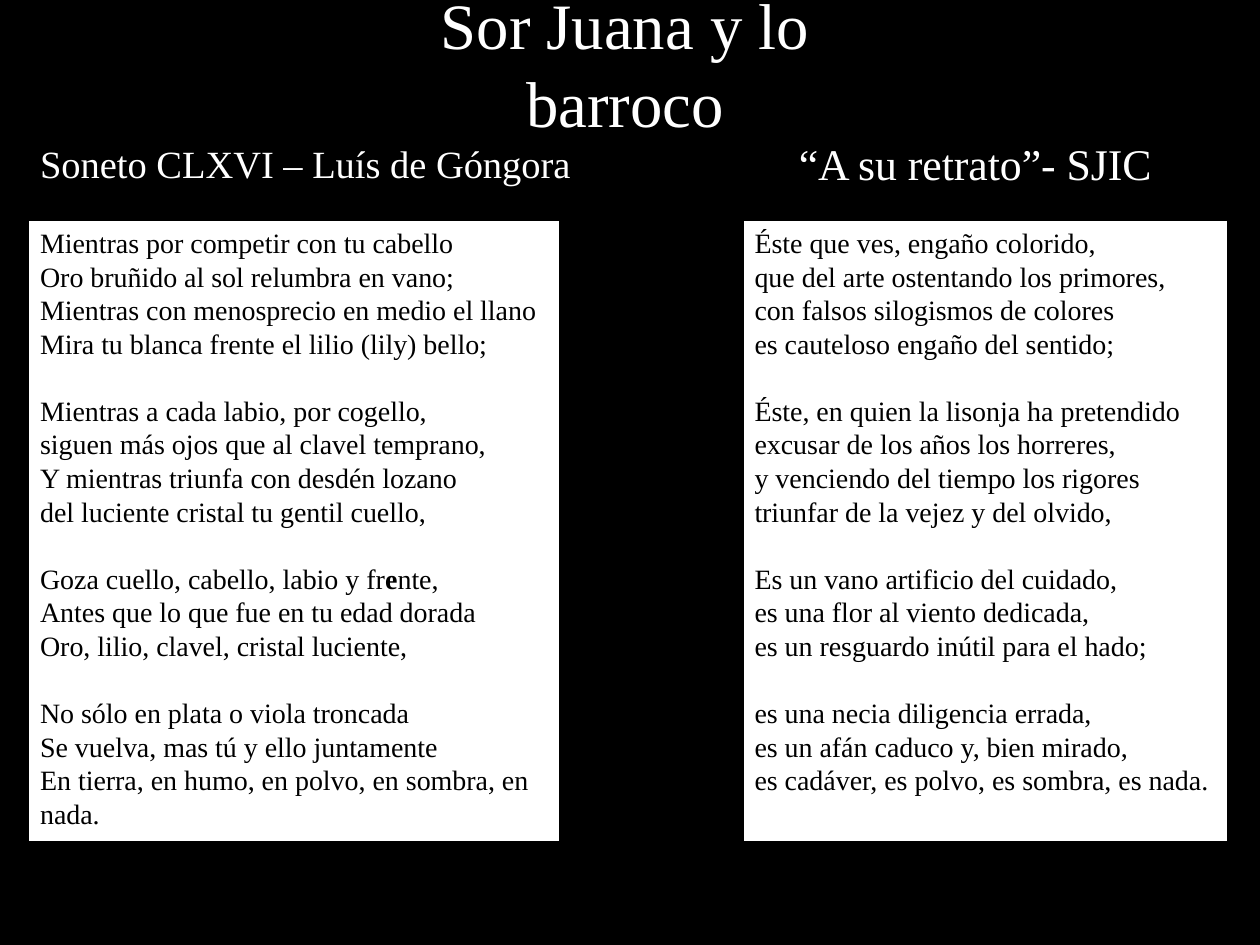
from pptx import Presentation
from pptx.dml.color import RGBColor
from pptx.enum.text import MSO_ANCHOR, PP_ALIGN
from pptx.util import Inches, Pt

TOP, MIDDLE = MSO_ANCHOR.TOP, MSO_ANCHOR.MIDDLE
LEFT, CENTER = PP_ALIGN.LEFT, PP_ALIGN.CENTER

THEME = {
    "font": "Times New Roman",
    "dark": RGBColor(0, 0, 0),
    "light": RGBColor(255, 255, 255),
    "title": 37,
    "gongora": 22,
    "sor_juana": 25,
    "verse": 16,
    "stanza_gap": 19.2,
    "border": 2,
}

TITLE = ("Sor Juana y lo barroco", (2.7, -0.13, 4.52, 1.25))

HEADINGS = [
    ("Soneto CLXVI – Luís de Góngora", (0.22, 1.06, 4.52, 0.47), "gongora", LEFT, TOP),
    ("“A su retrato”- SJIC", (5.48, 0.67, 4.52, 1.25), "sor_juana", CENTER, MIDDLE),
]

BOLD_VERSE = ("Goza cuello, cabello, labio y fr", "e", "nte,")

POEMS = [
    ((0.22, 1.74, 4.23, 4.95), [
        ["Mientras por competir con tu cabello",
         "Oro bruñido al sol relumbra en vano;",
         "Mientras con menosprecio en medio el llano",
         "Mira tu blanca frente el lilio (lily) bello;"],
        ["Mientras a cada labio, por cogello,",
         "siguen más ojos que al clavel temprano,",
         "Y mientras triunfa con desdén lozano",
         "del luciente cristal tu gentil cuello,"],
        [BOLD_VERSE,
         "Antes que lo que fue en tu edad dorada",
         "Oro, lilio, clavel, cristal luciente,"],
        ["No sólo en plata o viola troncada",
         "Se vuelva, mas tú y ello juntamente",
         "En tierra, en humo, en polvo, en sombra, en nada."],
    ]),
    ((5.89, 1.74, 3.86, 4.95), [
        ["Éste que ves, engaño colorido,",
         "que del arte ostentando los primores,",
         "con falsos silogismos de colores",
         "es cauteloso engaño del sentido;"],
        ["Éste, en quien la lisonja ha pretendido",
         "excusar de los años los horreres,",
         "y venciendo del tiempo los rigores",
         "triunfar de la vejez y del olvido,"],
        ["Es un vano artificio del cuidado,",
         "es una flor al viento dedicada,",
         "es un resguardo inútil para el hado;"],
        ["es una necia diligencia errada,",
         "es un afán caduco y, bien mirado,",
         "es cadáver, es polvo, es sombra, es nada."],
    ]),
]


def style(para, size, color, align=LEFT):
    para.alignment = align
    para.font.name = THEME["font"]
    para.font.size = Pt(THEME[size])
    para.font.color.rgb = THEME[color]


def add_box(page, place):
    box = page.shapes.add_textbox(*map(Inches, place))
    box.text_frame.word_wrap = True
    return box


def write_heading(box, text, size, align, anchor):
    frame = box.text_frame
    frame.text = text
    frame.vertical_anchor = anchor
    style(frame.paragraphs[0], size, "light", align)


def add_title(page, text, place):
    title = page.shapes.title
    title.left, title.top, title.width, title.height = map(Inches, place)
    write_heading(title, text, "title", CENTER, MIDDLE)


def write_verse(para, verse):
    parts = (verse,) if isinstance(verse, str) else verse
    for index, part in enumerate(parts):
        span = para.add_run()
        span.text = part
        if index == 1:
            span.font.bold = True
    style(para, "verse", "dark")


def add_poem(page, place, stanzas):
    box = add_box(page, place)
    box.fill.solid()
    box.fill.fore_color.rgb = THEME["light"]
    box.line.color.rgb = THEME["dark"]
    box.line.width = Pt(THEME["border"])
    para = box.text_frame.paragraphs[0]
    for number, stanza in enumerate(stanzas):
        for row, verse in enumerate(stanza):
            if number or row:
                para = box.text_frame.add_paragraph()
            if number and not row:
                para.space_before = Pt(THEME["stanza_gap"])
            write_verse(para, verse)


def main():
    deck = Presentation()
    deck.slide_width, deck.slide_height = Inches(10), Inches(7.5)
    page = deck.slides.add_slide(deck.slide_layouts.get_by_name("Title Only"))
    page.background.fill.solid()
    page.background.fill.fore_color.rgb = THEME["dark"]
    add_title(page, *TITLE)
    for place, stanzas in POEMS:
        add_poem(page, place, stanzas)
    for text, place, size, align, anchor in HEADINGS:
        write_heading(add_box(page, place), text, size, align, anchor)
    deck.save("out.pptx")


if __name__ == "__main__":
    main()
